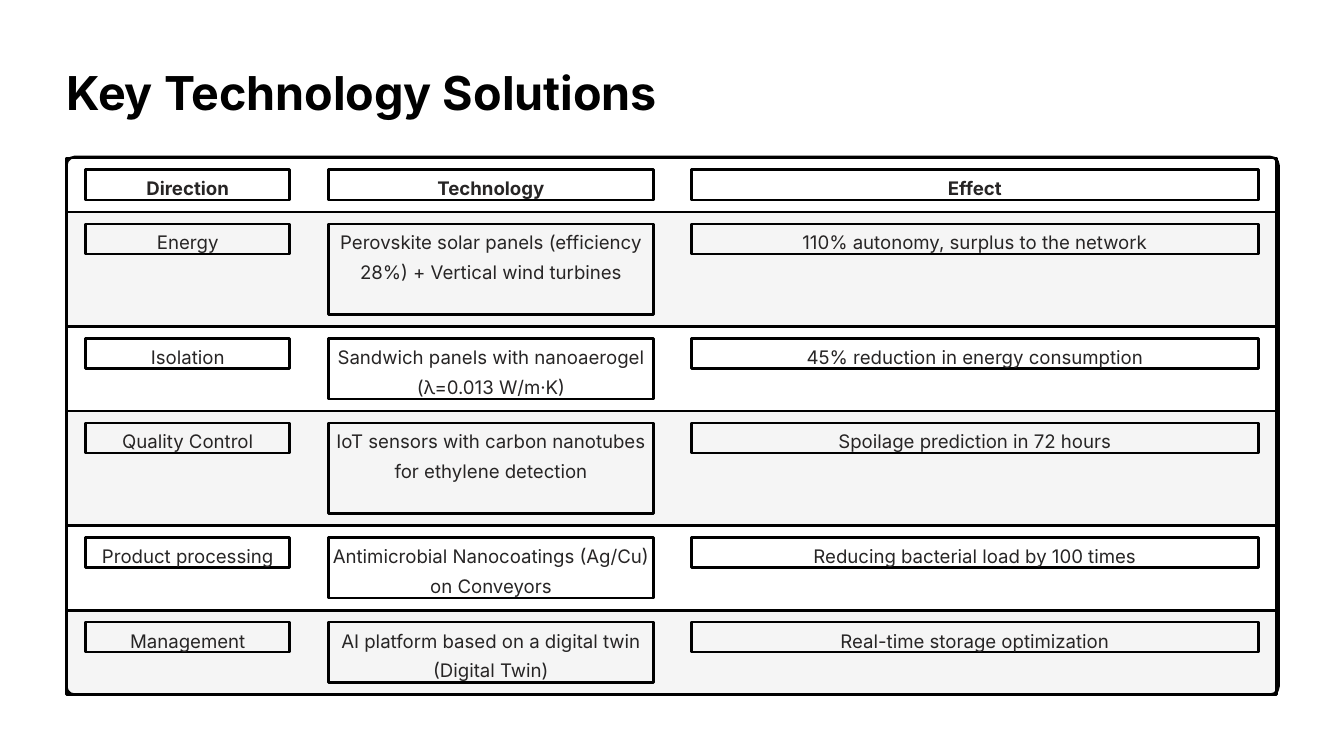
from lxml import etree
from pptx import Presentation
from pptx.dml.color import RGBColor
from pptx.enum import shapes, text
from pptx.oxml import ns
from pptx.util import Inches, Pt

TITLE = "Key Technology Solutions"
# Lines of room in the row, then its three cells
ROWS = [
    (1, "Direction", "Technology", "Effect"),
    (3, "Energy",
     "Perovskite solar panels (efficiency 28%) + Vertical wind turbines",
     "110% autonomy, surplus to the network"),
    (2, "Isolation", "Sandwich panels with nanoaerogel (λ=0.013 W/m·K)",
     "45% reduction in energy consumption"),
    (3, "Quality Control",
     "IoT sensors with carbon nanotubes for ethylene detection",
     "Spoilage prediction in 72 hours"),
    (2, "Product processing",
     "Antimicrobial Nanocoatings (Ag/Cu) on Conveyors",
     "Reducing bacterial load by 100 times"),
    (2, "Management", "AI platform based on a digital twin (Digital Twin)",
     "Real-time storage optimization"),
]
COLS = [(1.02, 2.43), (3.91, 3.87), (8.23, 6.75)]  # left, width

FONT = "Inter"
BLACK = RGBColor(0, 0, 0)
WHITE = RGBColor(255, 255, 255)
INK = RGBColor(0x27, 0x25, 0x25)
LEFT, TOP, WIDTH = 0.79, 1.88, 14.41
LINE, PAD = 0.36, 0.14
TINT = 4  # per cent opaque


def add_box(slide, kind, left, top, width, height, fill=None):
    box = slide.shapes.add_shape(
        kind, Inches(left), Inches(top), Inches(width), Inches(height))
    box.shadow.inherit = False
    box.line.color.rgb = BLACK
    box.line.width = Pt(2.25)
    if fill is None:
        box.fill.background()
    else:
        box.fill.solid()
        box.fill.fore_color.rgb = fill
        color = box.fill._xPr.find(".//" + ns.qn("a:srgbClr"))
        etree.SubElement(color, ns.qn("a:alpha")).set("val", str(TINT * 1000))
    return box


def write(shape, words, size, space, color, bold, align, wrap):
    frame = shape.text_frame
    frame.text = words
    frame.margin_left = frame.margin_right = 0
    frame.margin_top = frame.margin_bottom = 0
    frame.auto_size = text.MSO_AUTO_SIZE.NONE
    frame.vertical_anchor = text.MSO_ANCHOR.TOP
    frame.word_wrap = wrap
    para = frame.paragraphs[0]
    para.alignment = align
    para.line_spacing = Pt(space)
    font = para.runs[0].font
    font.name, font.size, font.bold = FONT, Pt(size), bold
    font.color.rgb = color


def main():
    deck = Presentation()
    deck.slide_width, deck.slide_height = Inches(16), Inches(9)
    slide = deck.slides.add_slide(deck.slide_layouts[5])
    slide.background.fill.solid()
    slide.background.fill.fore_color.rgb = WHITE

    title = slide.shapes.title
    title.left, title.top = Inches(LEFT), Inches(0.72)
    title.width, title.height = Inches(8.6), Inches(0.7)
    write(title, TITLE, 40, 50.5, BLACK, True, text.PP_ALIGN.LEFT, False)

    rect = shapes.MSO_SHAPE.RECTANGLE
    frame = add_box(slide, shapes.MSO_SHAPE.ROUNDED_RECTANGLE,
                    LEFT, 1.87, 14.43, 6.4)
    frame.adjustments[0] = 0.015

    top = TOP
    for index, (lines, *cells) in enumerate(ROWS):
        height = lines * LINE + 2 * PAD + 0.005
        add_box(slide, rect, LEFT, top, WIDTH, height,
                BLACK if index % 2 else WHITE)
        for col, (words, (left, width)) in enumerate(zip(cells, COLS)):
            room = lines if col == 1 else 1
            cell = add_box(slide, rect, left, top + PAD, width, room * LINE)
            write(cell, words, 16, 25.5, INK, index == 0,
                  text.PP_ALIGN.CENTER, room > 1)
        top += height

    deck.save("out.pptx")


if __name__ == "__main__":
    main()
